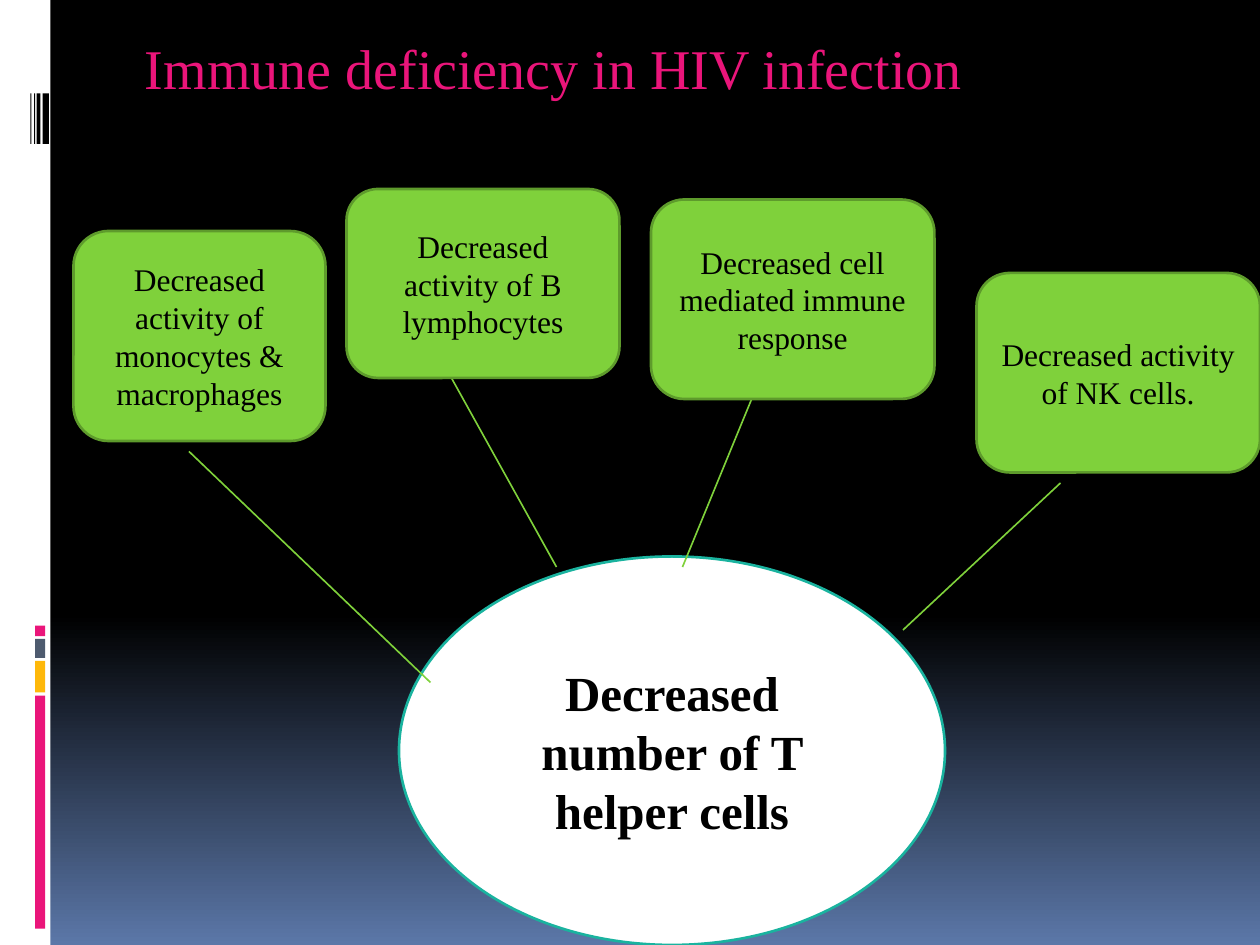
"""Build a slide on how HIV infection weakens the immune system."""
from dataclasses import dataclass

from lxml.etree import SubElement
from pptx import Presentation
from pptx.dml.color import RGBColor
from pptx.enum.shapes import MSO_CONNECTOR, MSO_SHAPE
from pptx.enum.text import MSO_ANCHOR, MSO_AUTO_SIZE, PP_ALIGN
from pptx.oxml.ns import qn
from pptx.util import Inches, Pt


@dataclass(frozen=True)
class Theme:
    font: str = "Times New Roman"
    black: str = "000000"
    white: str = "FFFFFF"
    blue: str = "5B77A8"
    pink: str = "EA157A"
    gold: str = "FEB80A"
    slate: str = "4E5B6F"
    green: str = "7FD13B"
    moss: str = "5E9B2C"
    teal: str = "1AB39F"
    head: int = 32
    core: int = 28
    note: int = 18
    edge: float = 1.5
    link: float = 0.94


def unit(count):
    return Inches(count / 12)


def tint(code):
    return RGBColor.from_string(code)


class Board:
    def __init__(self, deck, theme):
        self.theme = theme
        self.slide = deck.slides.add_slide(deck.slide_layouts[5])

    def fade(self, start):
        fill = self.slide.background.fill
        fill.gradient()
        fill.gradient_angle = 270
        stops = zip(fill.gradient_stops, (start, 1), (self.theme.black, self.theme.blue))
        for stop, place, code in stops:
            stop.position = place
            stop.color.rgb = tint(code)

    def style(self, para, size, code, bold=False):
        para.font.name = self.theme.font
        para.font.size = Pt(size)
        para.font.bold = bold
        para.font.color.rgb = tint(code)

    def title(self, text, area):
        head = self.slide.shapes.title
        head.left, head.top, head.width, head.height = map(unit, area)
        frame = head.text_frame
        frame.text = text
        frame.auto_size = MSO_AUTO_SIZE.NONE
        frame.vertical_anchor = MSO_ANCHOR.TOP
        para = frame.paragraphs[0]
        para.alignment = PP_ALIGN.LEFT
        self.style(para, self.theme.head, self.theme.pink)

    def shape(self, kind, area, fill, line=None):
        item = self.slide.shapes.add_shape(kind, *map(unit, area))
        item.shadow.inherit = False
        item.fill.solid()
        item.fill.fore_color.rgb = tint(fill)
        if line:
            item.line.color.rgb = tint(line)
            item.line.width = Pt(self.theme.edge)
        else:
            item.line.fill.background()
        return item

    def bar(self, area, fill):
        self.shape(MSO_SHAPE.RECTANGLE, area, fill)

    def label(self, item, text, size, bold=False):
        frame = item.text_frame
        frame.text = text
        frame.word_wrap = True
        frame.vertical_anchor = MSO_ANCHOR.MIDDLE
        para = frame.paragraphs[0]
        para.alignment = PP_ALIGN.CENTER
        self.style(para, size, self.theme.black, bold)

    def box(self, text, area):
        item = self.shape(MSO_SHAPE.ROUNDED_RECTANGLE, area, self.theme.green, self.theme.moss)
        self.label(item, text, self.theme.note)

    def oval(self, text, area):
        item = self.shape(MSO_SHAPE.OVAL, area, self.theme.white, self.theme.teal)
        self.label(item, text, self.theme.core, True)

    def link(self, ends):
        line = self.slide.shapes.add_connector(MSO_CONNECTOR.STRAIGHT, *map(unit, ends))
        line.line.color.rgb = tint(self.theme.green)
        line.line.width = Pt(self.theme.link)
        SubElement(line.element.spPr, qn("a:effectLst"))


def main():
    theme = Theme()
    deck = Presentation()
    deck.slide_width, deck.slide_height = unit(120), unit(90)
    board = Board(deck, theme)
    board.fade(0.65)

    board.bar((0, 0, 4.8, 90), theme.white)
    blocks = (
        (66.25, 22.2, theme.pink),
        (62.95, 3, theme.gold),
        (60.85, 1.8, theme.slate),
        (59.6, 1, theme.pink),
    )
    for top, tall, code in blocks:
        board.bar((3.35, top, 0.95, tall), code)
    for left, wide in ((4.05, 0.6), (3.5, 0.36), (3.24, 0.12), (2.88, 0.12)):
        board.bar((left, 8.9, wide, 4.8), theme.black)

    board.title("Immune deficiency in HIV infection", (12.6, 2.6, 105, 8))
    board.oval("Decreased number of T helper cells", (38, 53, 52, 37))
    effects = (
        ("Decreased activity of monocytes & macrophages", (7, 22, 24, 20), (18, 43, 41, 65)),
        ("Decreased activity of B lymphocytes", (33, 18, 26, 18), (43, 36, 53, 54)),
        ("Decreased cell mediated immune response", (62, 19, 27, 19), (72, 37, 65, 54)),
        ("Decreased activity of NK cells.", (93, 26, 27, 19), (101, 46, 86, 60)),
    )
    for text, area, ends in effects:
        board.link(ends)
        board.box(text, area)

    deck.save("out.pptx")


if __name__ == "__main__":
    main()
